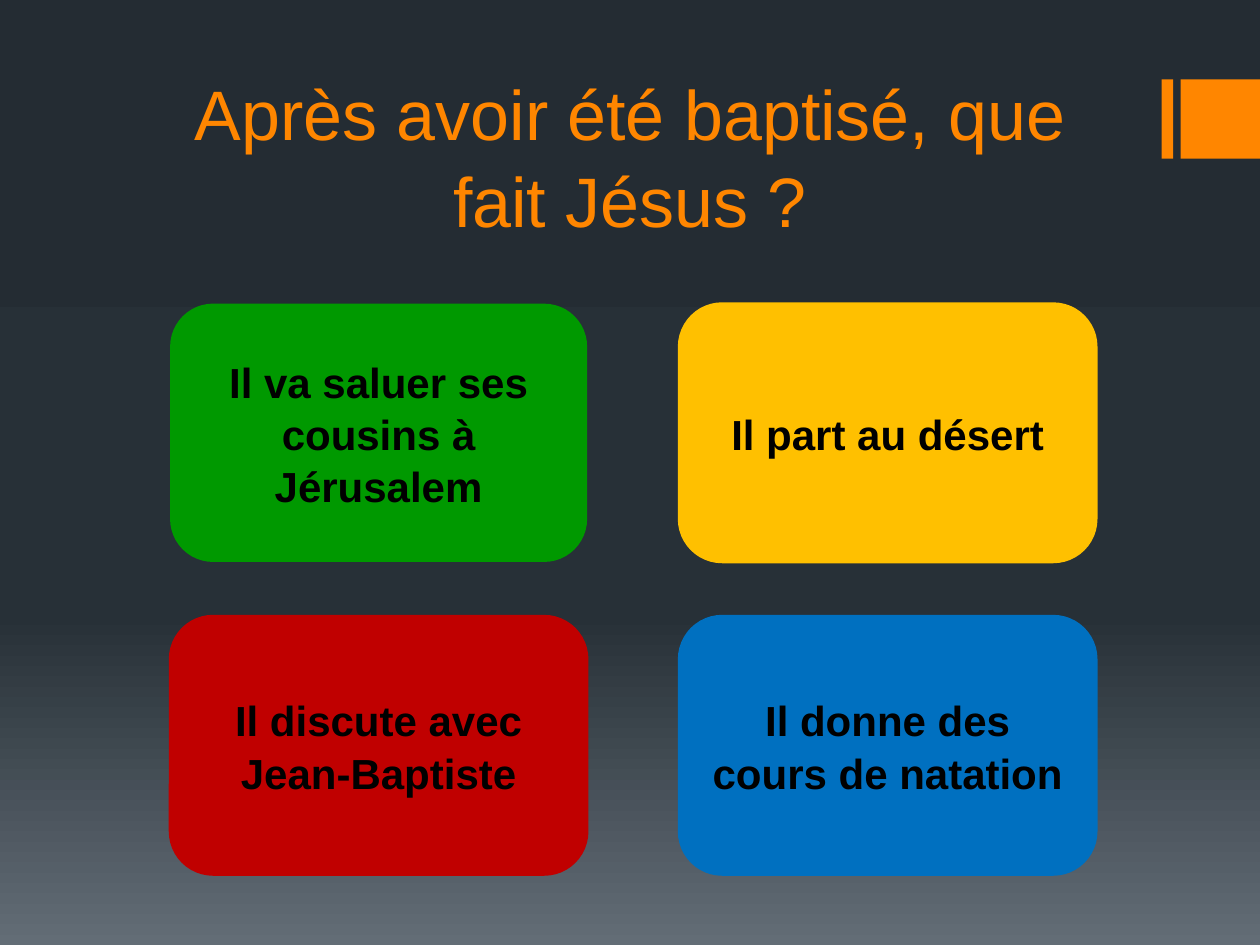
import copy

import pptx
import pptx.dml.color
import pptx.enum.shapes
import pptx.enum.text
import pptx.oxml.ns
import pptx.util

Inches = pptx.util.Inches
Pt = pptx.util.Pt
SHAPE = pptx.enum.shapes.MSO_SHAPE

COLORS = {
    "night": "242C33",
    "slate": "273037",
    "mist": "636D76",
    "accent": "FF8600",
    "green": "009900",
    "yellow": "FFC000",
    "red": "C00000",
    "blue": "0070C0",
    "ink": "000000",
}


def rgb(name):
    return pptx.dml.color.RGBColor.from_string(COLORS[name])


def write(frame, text, size=24, color="ink", bold=False, spacing=1.04):
    """Fill a text frame with one centred paragraph."""
    frame.word_wrap = True
    frame.vertical_anchor = pptx.enum.text.MSO_ANCHOR.MIDDLE
    paragraph = frame.paragraphs[0]
    paragraph.alignment = pptx.enum.text.PP_ALIGN.CENTER
    paragraph.line_spacing = spacing
    run = paragraph.add_run()
    run.text = text
    run.font.name = "Arial"
    run.font.size = Pt(size)
    run.font.bold = bold
    run.font.color.rgb = rgb(color)


def add_block(slide, kind, box, color, outlined=False):
    block = slide.shapes.add_shape(kind, *map(Inches, box))
    block.shadow.inherit = False
    block.fill.solid()
    block.fill.fore_color.rgb = rgb(color)
    if outlined:
        block.line.color.rgb = rgb(color)
        block.line.width = Pt(1.5)
    else:
        block.line.fill.background()
    return block


def paint_background(slide):
    fill = slide.background.fill
    fill.gradient()
    fill.gradient_angle = 270
    # A new gradient has two stops: add the third
    stop_list = slide.element.find(".//" + pptx.oxml.ns.qn("a:gsLst"))
    stop_list.append(copy.deepcopy(stop_list[-1]))
    stops = [("night", 0), ("slate", 0.65), ("mist", 1)]
    for stop, (color, position) in zip(fill.gradient_stops, stops):
        stop.color.rgb = rgb(color)
        stop.position = position


def add_corner_mark(slide, left, top, width, height):
    """A thin bar, then a square that ends at the right edge."""
    add_block(slide, SHAPE.RECTANGLE, (left, top, 0.09, height), "accent")
    add_block(slide, SHAPE.RECTANGLE,
              (left + width - height, top, height, height), "accent")


def add_title(slide, left, top, width, height, text):
    title = slide.shapes.add_textbox(*map(Inches, (left, top, width, height)))
    title.text_frame.margin_top = Inches(0.13)
    write(title.text_frame, text, size=40, color="accent")


def add_answers(slide, left, top, width, height, answers):
    """Two columns of rounded cards, spread over the box."""
    card_width, card_height = 3.31, 2.05
    for index, (text, color, outlined) in enumerate(answers):
        row, column = divmod(index, 2)
        box = (left + column * (width - card_width),
               top + row * (height - card_height), card_width, card_height)
        card = add_block(slide, SHAPE.ROUNDED_RECTANGLE, box, color, outlined)
        write(card.text_frame, text, bold=True)


def main():
    deck = pptx.Presentation()
    deck.slide_width, deck.slide_height = Inches(10), Inches(7.5)
    slide = deck.slides.add_slide(deck.slide_layouts[6])

    paint_background(slide)
    add_corner_mark(slide, 9.22, 0.63, 0.78, 0.63)
    add_title(slide, 1, 0.36, 8, 1.65,
              "Après avoir été baptisé, que fait Jésus ?")
    add_answers(slide, 1.35, 2.41, 7.35, 4.53, [
        ("Il va saluer ses cousins à Jérusalem", "green", False),
        ("Il part au désert", "yellow", True),
        ("Il discute avec Jean-Baptiste", "red", True),
        ("Il donne des cours de natation", "blue", True),
    ])

    deck.save("out.pptx")


if __name__ == "__main__":
    main()
